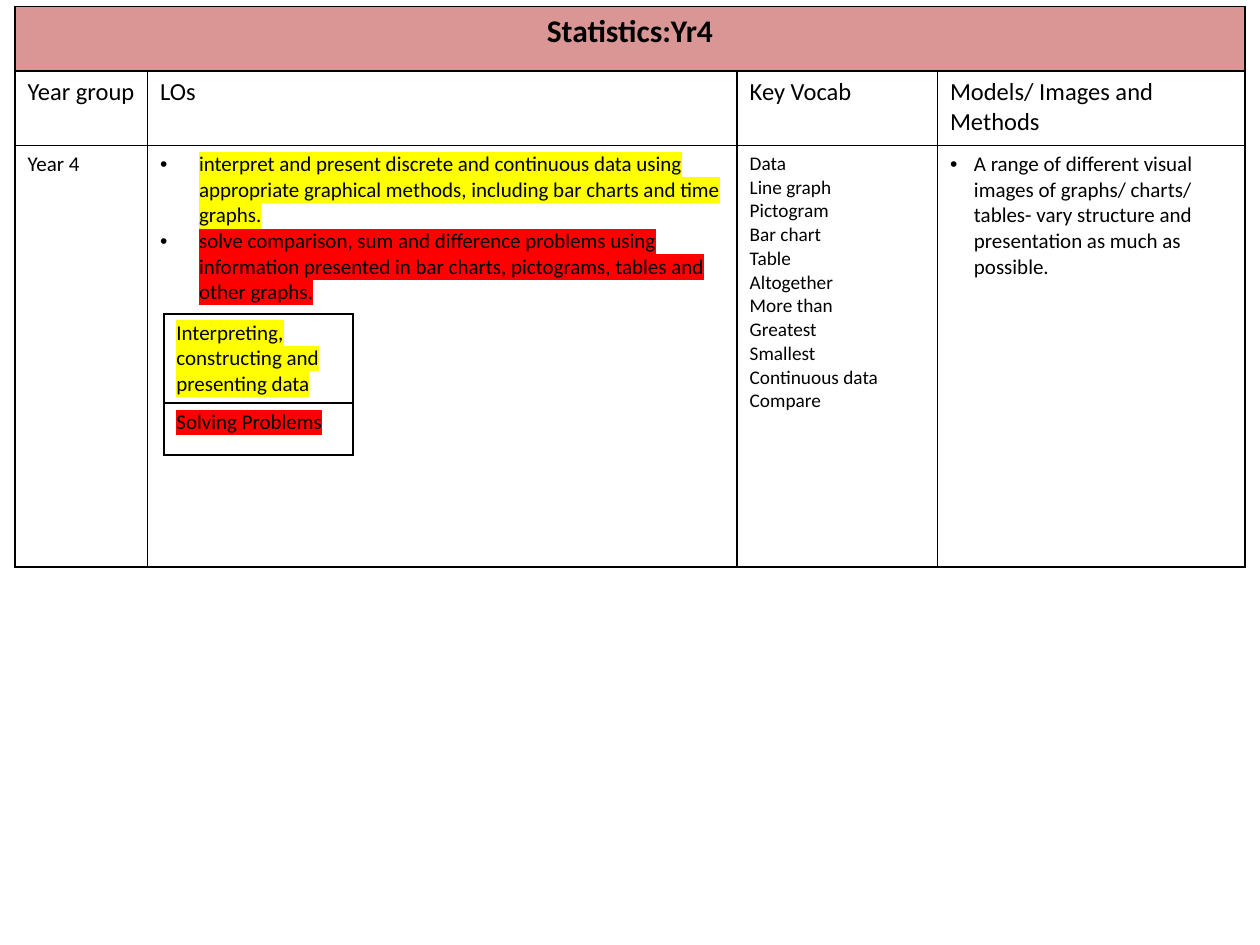
import pptx
import pptx.util
import pptx.dml.color
import pptx.enum.text
import pptx.oxml.ns
from lxml import etree

HUES = {"ink": "000000", "paper": "FFFFFF", "rose": "D99694",
        "yellow": "FFFF00", "red": "FF0000"}
FACE = "Calibri"
WIDE, HIGH = pptx.util.Inches(10), pptx.util.Inches(7.5)
COL, ROW = WIDE / 100, HIGH / 100  # grid of 100 columns by 100 rows

HEADS = ["Year group", "LOs", "Key Vocab", "Models/ Images and Methods"]
GOALS = [
    ("interpret and present discrete and continuous data using appropriate "
     "graphical methods, including bar charts and time graphs.", "yellow"),
    ("solve comparison, sum and difference problems using information "
     "presented in bar charts, pictograms, tables and other graphs.", "red"),
]
VOCAB = ["Data", "Line graph", "Pictogram", "Bar chart", "Table", "Altogether",
         "More than", "Greatest", "Smallest", "Continuous data", "Compare"]
MODELS = ("A range of different visual images of graphs/ charts/ tables- vary "
          "structure and presentation as much as possible.")
KEYS = [("Interpreting, constructing and presenting data", "yellow"),
        ("Solving Problems", "red")]


def add(node, tag, **attrs):
    return etree.SubElement(node, pptx.oxml.ns.qn(tag), **attrs)


def frame(cell):
    """Draw a 1 pt line on all four sides of a cell."""
    props = cell._tc.get_or_add_tcPr()
    for at, side in enumerate(("a:lnL", "a:lnR", "a:lnT", "a:lnB")):
        line = add(props, side, w=str(pptx.util.Pt(1)))
        add(add(line, "a:solidFill"), "a:srgbClr", val=HUES["ink"])
        props.insert(at, line)


def grid(slide, left, top, cols, rows):
    """Add a plain ruled table, measured in grid columns and rows."""
    table = slide.shapes.add_table(
        len(rows), len(cols), int(left * COL), int(top * ROW),
        int(sum(cols) * COL), int(sum(rows) * ROW)).table
    table.first_row = table.horz_banding = False
    for part, size in zip(table.columns, cols):
        part.width = int(size * COL)
    for part, size in zip(table.rows, rows):
        part.height = int(size * ROW)
    for cell in table.iter_cells():
        cell.fill.background()
        frame(cell)
    return table


def paint(cell, hue):
    cell.fill.solid()
    cell.fill.fore_color.rgb = pptx.dml.color.RGBColor.from_string(HUES[hue])


def write(cell, lines, size, bold=False, indent=None):
    """Fill a cell with (text, highlight) lines, bulleted if indented."""
    for at, (text, mark) in enumerate(lines):
        para = cell.text_frame.paragraphs[0] if at == 0 else cell.text_frame.add_paragraph()
        run = para.add_run()
        run.text = text
        if mark:
            glow = add(run._r.get_or_add_rPr(), "a:highlight")
            add(glow, "a:srgbClr", val=HUES[mark])
        if indent:
            props = para._p.get_or_add_pPr()
            step = pptx.util.Inches(indent)
            props.set("marL", str(step))
            props.set("indent", str(-step))
            add(props, "a:buFont", typeface="Arial")
            add(props, "a:buChar", char="•")
        font = para.font
        font.name, font.size, font.bold = FACE, pptx.util.Pt(size), bold
        font.color.rgb = pptx.dml.color.RGBColor.from_string(HUES["ink"])


def plan(slide, left, top):
    """Main table: title band, headings and the year's content."""
    table = grid(slide, left, top, [10.5, 46.8, 15.9, 24.4], [6.8, 7.9, 44.6])

    # Title band
    title = table.cell(0, 0)
    title.merge(table.cell(0, 3))
    paint(title, "rose")
    write(title, [("Statistics:Yr4", None)], 18, bold=True)
    title.text_frame.paragraphs[0].alignment = pptx.enum.text.PP_ALIGN.CENTER

    # Headings
    for at, head in enumerate(HEADS):
        write(table.cell(1, at), [(head, None)], 14)
        if at:
            for row in (1, 2):
                paint(table.cell(row, at), "paper")

    # Content
    year, goals, vocab, models = (table.cell(2, at) for at in range(4))
    write(year, [("Year 4", None)], 12)
    write(goals, GOALS, 12, indent=0.31)
    write(vocab, [(word, None) for word in VOCAB], 11)
    write(models, [(MODELS, None)], 12, indent=0.19)


def legend(slide, left, top):
    """Small key to the highlight colours."""
    table = grid(slide, left, top, [15], [9.4, 5.5])
    for at, key in enumerate(KEYS):
        write(table.cell(at, 0), [key], 12)


def main():
    deck = pptx.Presentation()
    deck.slide_width, deck.slide_height = WIDE, HIGH
    slide = deck.slides.add_slide(deck.slide_layouts[6])
    plan(slide, 1.2, 0.7)
    legend(slide, 13, 33.2)
    deck.save("out.pptx")


if __name__ == "__main__":
    main()
